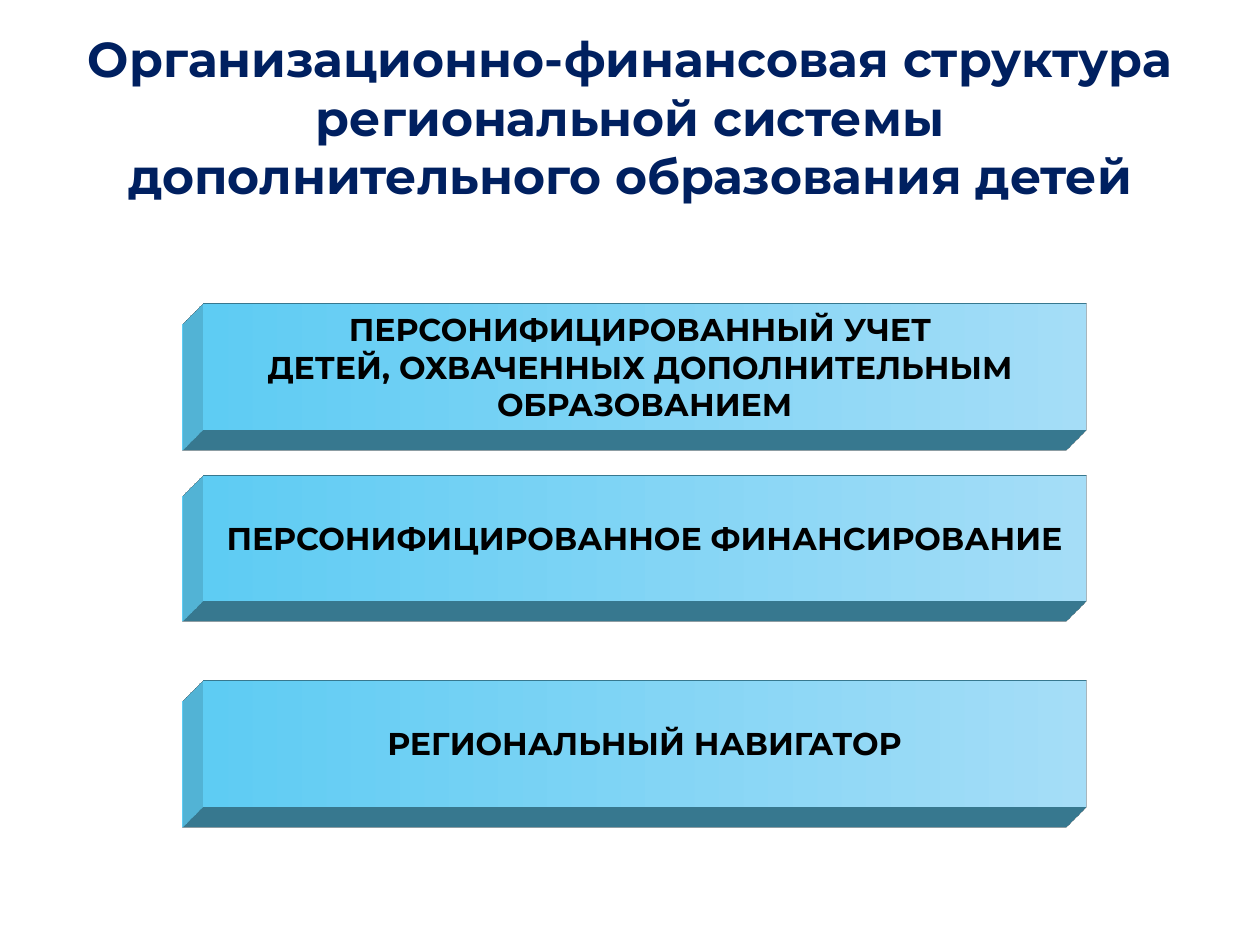
import pptx
import pptx.util
import pptx.dml.color
import pptx.enum.shapes
import pptx.enum.text
import lxml.etree

Pt = pptx.util.Pt
FONT = "Montserrat"
COLORS = {"title": "002060", "text": "000000", "bar_start": "5ECCF3", "bar_end": "A5DDF7"}
DRAWING_NS = "http://schemas.openxmlformats.org/drawingml/2006/main"
BARS = [
    (173.5, ["ПЕРСОНИФИЦИРОВАННЫЙ УЧЕТ ", "ДЕТЕЙ, ОХВАЧЕННЫХ ДОПОЛНИТЕЛЬНЫМ ", "ОБРАЗОВАНИЕМ"]),
    (271.5, ["ПЕРСОНИФИЦИРОВАННОЕ ФИНАНСИРОВАНИЕ"]),
    (388.8, ["РЕГИОНАЛЬНЫЙ НАВИГАТОР"]),
]


def rgb(name):
    return pptx.dml.color.RGBColor.from_string(COLORS[name])


def write_lines(frame, lines, size, color):
    frame.vertical_anchor = pptx.enum.text.MSO_ANCHOR.MIDDLE
    for index, line in enumerate(lines):
        para = frame.paragraphs[0] if index == 0 else frame.add_paragraph()
        para.text = line
        para.alignment = pptx.enum.text.PP_ALIGN.CENTER
        para.font.name = FONT
        para.font.size = Pt(size)
        para.font.bold = True
        para.font.color.rgb = rgb(color)


def extrude(shape):
    scene = (
        f'<a:scene3d xmlns:a="{DRAWING_NS}">'
        '<a:camera prst="legacyObliqueBottomLeft"/>'
        '<a:lightRig rig="legacyFlat3" dir="t"/></a:scene3d>'
    )
    solid = (
        f'<a:sp3d xmlns:a="{DRAWING_NS}" extrusionH="430200" prstMaterial="legacyMatte">'
        f'<a:extrusionClr><a:srgbClr val="{COLORS["bar_start"]}"/></a:extrusionClr></a:sp3d>'
    )
    for xml in (scene, solid):
        shape.element.spPr.append(lxml.etree.fromstring(xml))


def add_title(page, left, top, width, height):
    title = page.shapes.title
    title.left, title.top, title.width, title.height = map(Pt, (left, top, width, height))
    title.text_frame.word_wrap = True
    text = "Организационно-финансовая структура региональной системы дополнительного образования детей"
    write_lines(title.text_frame, [text], 28, "title")


def add_bar(page, left, top, width, height, lines):
    bar = page.shapes.add_shape(
        pptx.enum.shapes.MSO_SHAPE.PENTAGON, *map(Pt, (left, top, width, height)))
    bar.adjustments[0] = 0
    bar.fill.gradient()
    bar.fill.gradient_angle = 0
    for stop, position, color in zip(bar.fill.gradient_stops, (0, 1), ("bar_start", "bar_end")):
        stop.position = position
        stop.color.rgb = rgb(color)
    bar.line.fill.background()
    bar.shadow.inherit = False
    extrude(bar)
    bar.text_frame.word_wrap = False
    write_lines(bar.text_frame, lines, 18, "text")


def main():
    deck = pptx.Presentation()
    deck.slide_width, deck.slide_height = Pt(720), Pt(540)
    page = deck.slides.add_slide(deck.slide_layouts[5])
    add_title(page, 36, 21.6, 648, 90)
    for top, lines in BARS:
        add_bar(page, 116, top, 504.7, 72, lines)
    deck.save("out.pptx")


if __name__ == "__main__":
    main()
